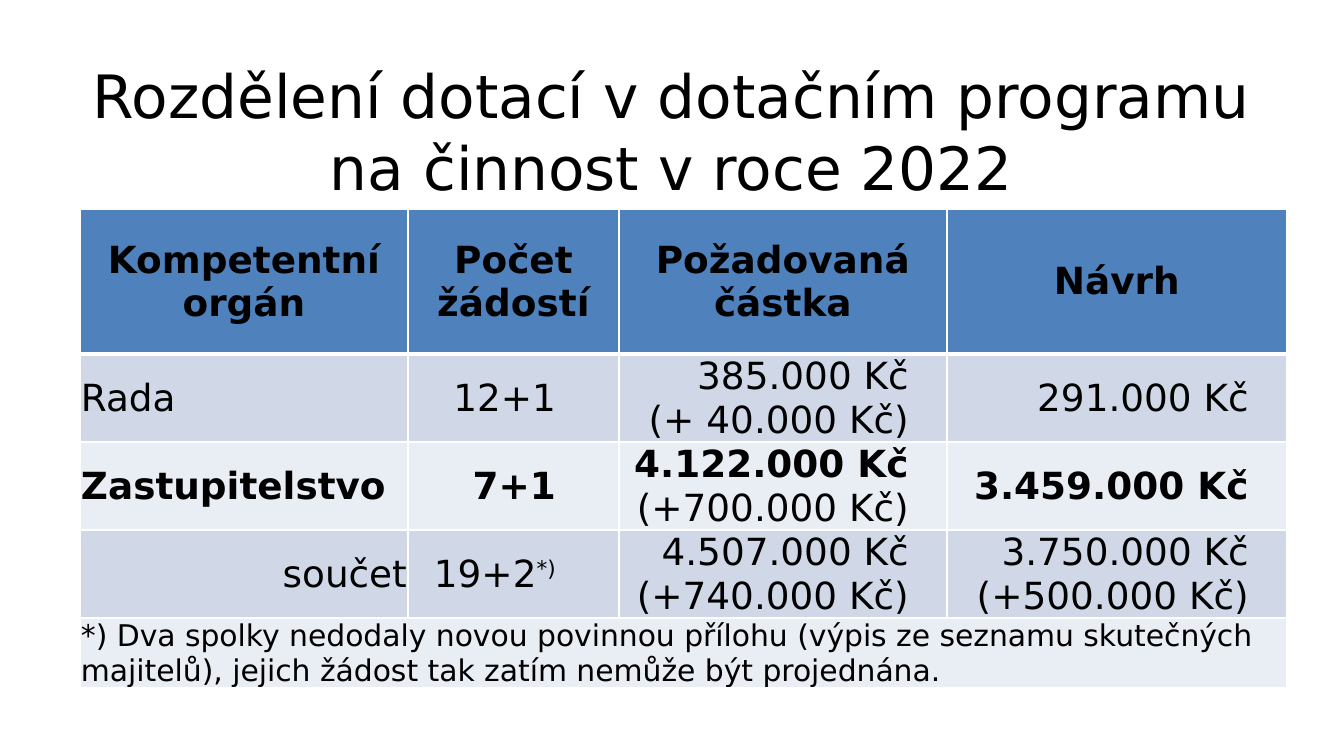
from lxml.etree import fromstring
from pptx import Presentation
from pptx.dml.color import RGBColor
from pptx.enum.text import MSO_ANCHOR, MSO_AUTO_SIZE, PP_ALIGN
from pptx.util import Pt

NS = "http://schemas.openxmlformats.org/drawingml/2006/main"
FONT = "DejaVu Sans"
SCALE = 914400 / 134.4
LEFT, MID, RIGHT = PP_ALIGN.LEFT, PP_ALIGN.CENTER, PP_ALIGN.RIGHT

TITLE = ["Rozdělení dotací v dotačním programu", "na činnost v roce 2022"]
COLS = [328, 211, 328, 340]
ROWS = [145, 88, 88, 88, 47]
FILLS = ["4F81BD", "D0D8E8", "E9EDF4", "D0D8E8", "E9EDF4"]
INSETS = [1, 63, 38, 38]
HEADS = ["Kompetentní orgán", "Počet žádostí", "Požadovaná částka", "Návrh"]
BODY = [
    [["Rada"], ["12+1"], ["385.000 Kč", "(+ 40.000 Kč)"], ["291.000 Kč"]],
    [["Zastupitelstvo"], ["7+1"], ["4.122.000 Kč", "(+700.000 Kč)"], ["3.459.000 Kč"]],
    [["součet"], ["19+2"], ["4.507.000 Kč", "(+740.000 Kč)"],
     ["3.750.000 Kč", "(+500.000 Kč)"]],
]
MARK = "*)"
NOTE = ("*) Dva spolky nedodaly novou povinnou přílohu (výpis ze seznamu skutečných "
        "majitelů), jejich žádost tak zatím nemůže být projednána.")
BOLD_ROW, SUM_ROW, NOTE_ROW = 2, 3, 4


def px(n):
    return round(n * SCALE)


def color(code):
    return RGBColor.from_string(code)


def add_run(para, text, size, bold=False):
    run = para.add_run()
    run.text = text
    font = run.font
    font.name, font.size, font.bold = FONT, Pt(size), bold
    font.color.rgb = color("000000")
    return run


def style(cell, fill, inset, base):
    cell.fill.solid()
    cell.fill.fore_color.rgb = color(fill)
    cell.vertical_anchor = MSO_ANCHOR.MIDDLE
    cell.margin_left = cell.margin_top = px(1)
    cell.margin_right, cell.margin_bottom = px(inset), 0
    props = cell._tc.get_or_add_tcPr()
    for i, side in enumerate("LRTB"):
        width = Pt(base if side == "B" else 1)
        props.insert(i, fromstring(
            f'<a:ln{side} xmlns:a="{NS}" w="{width}"><a:solidFill>'
            f'<a:srgbClr val="FFFFFF"/></a:solidFill></a:ln{side}>'))


def write(cell, lines, align, size=20, bold=False):
    frame = cell.text_frame
    for i, line in enumerate(lines):
        para = frame.add_paragraph() if i else frame.paragraphs[0]
        para.alignment = align
        add_run(para, line, size, bold and i == 0)


deck = Presentation()
deck.slide_width, deck.slide_height = px(1344), px(756)
slide = deck.slides.add_slide(deck.slide_layouts[5])

title = slide.shapes.title
title.left, title.top, title.width, title.height = map(px, (67, 31, 1210, 199))
frame = title.text_frame
frame.auto_size = MSO_AUTO_SIZE.NONE
frame.vertical_anchor = MSO_ANCHOR.MIDDLE
para = frame.paragraphs[0]
para.alignment = MID
for i, line in enumerate(TITLE):
    if i:
        para.add_line_break()
    add_run(para, line, 32)

table = slide.shapes.add_table(
    len(ROWS), len(COLS), px(80), px(209), px(sum(COLS)), px(sum(ROWS))).table
for col, width in zip(table.columns, COLS):
    col.width = px(width)
for row, height in zip(table.rows, ROWS):
    row.height = px(height)

for r, fill in enumerate(FILLS):
    for c, inset in enumerate(INSETS):
        plain = r in (0, NOTE_ROW)
        style(table.cell(r, c), fill, 1 if plain else inset, 1 if r else 3)

for c, head in enumerate(HEADS):
    write(table.cell(0, c), [head], MID, bold=True)
for r, row in enumerate(BODY, 1):
    for c, lines in enumerate(row):
        align = RIGHT if c or r == SUM_ROW else LEFT
        write(table.cell(r, c), lines, align, bold=r == BOLD_ROW)

mark = add_run(table.cell(SUM_ROW, 1).text_frame.paragraphs[0], MARK, 20)
mark.font._element.set("baseline", "30000")

note = table.cell(NOTE_ROW, 0)
note.merge(table.cell(NOTE_ROW, len(COLS) - 1))
write(note, [NOTE], LEFT, size=16)

deck.save("out.pptx")
